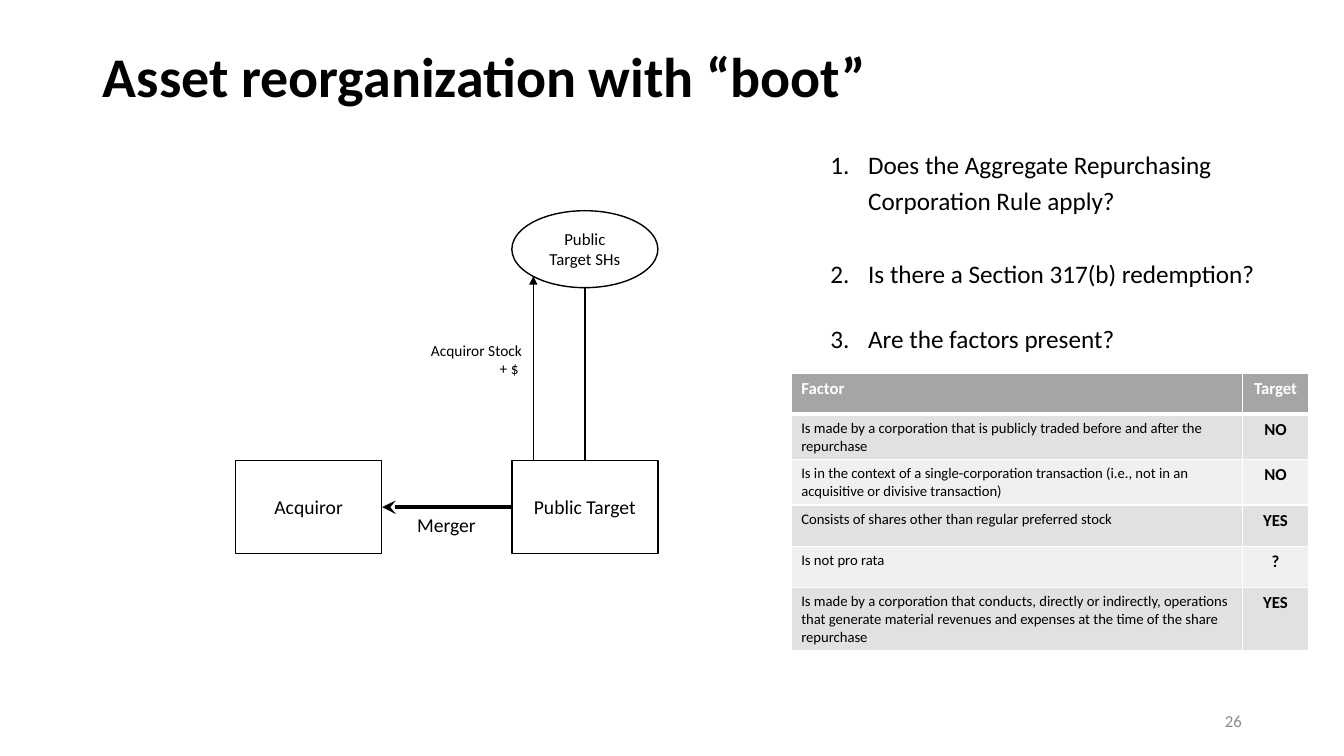
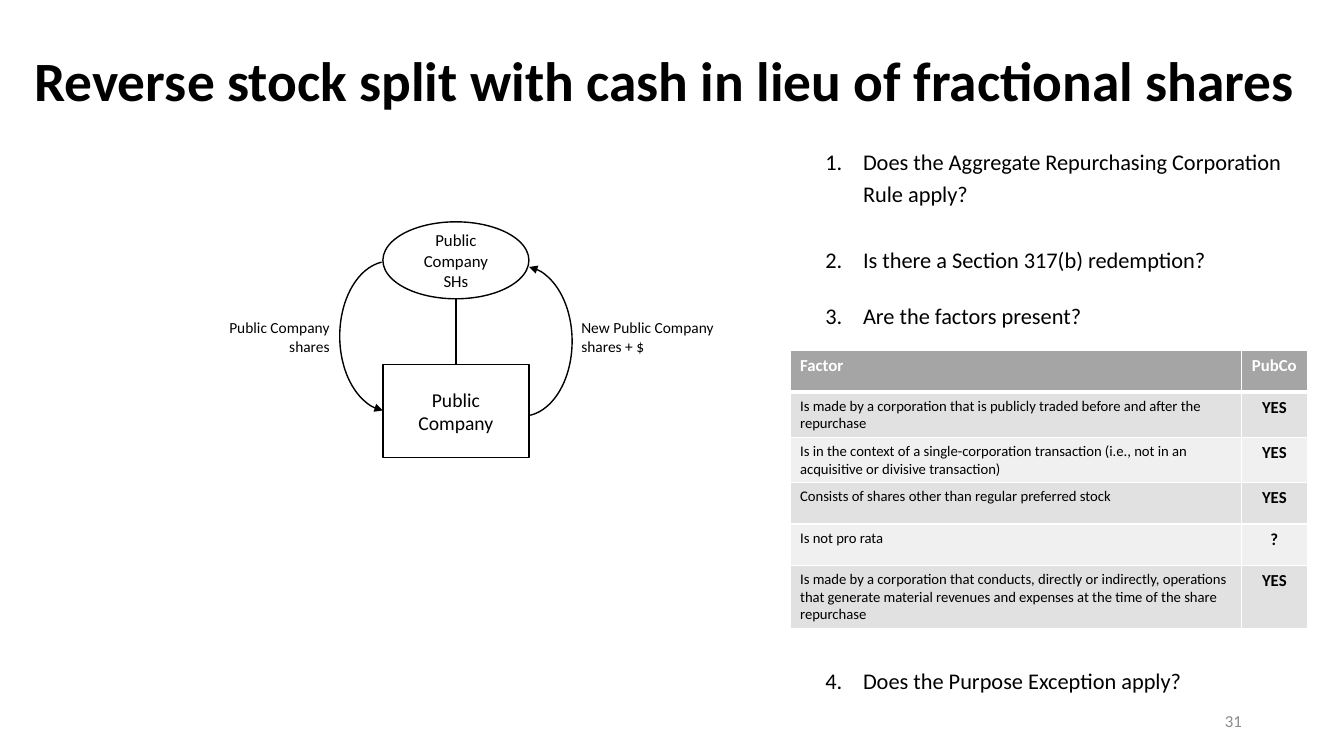
from lxml import etree
from pptx import Presentation
from pptx.dml.color import RGBColor
from pptx.enum.shapes import MSO_CONNECTOR, MSO_SHAPE
from pptx.enum.text import MSO_ANCHOR, MSO_AUTO_SIZE, PP_ALIGN
from pptx.oxml.ns import qn
from pptx.util import Cm, Pt

LEFT, CENTER, RIGHT = PP_ALIGN.LEFT, PP_ALIGN.CENTER, PP_ALIGN.RIGHT
TOP, MIDDLE = MSO_ANCHOR.TOP, MSO_ANCHOR.MIDDLE
RECTANGLE, OVAL, ARC = MSO_SHAPE.RECTANGLE, MSO_SHAPE.OVAL, MSO_SHAPE.ARC
STRAIGHT = MSO_CONNECTOR.STRAIGHT
NO_AUTOFIT = MSO_AUTO_SIZE.NONE

COLORS = {
    "ink": "000000",
    "white": "FFFFFF",
    "number": "8C8C8C",
    "header": "A5A5A5",
    "odd": "E1E1E1",
    "even": "F0F0F0",
}
FONT = "Calibri"
NODE_WIDTH, BOX_HEIGHT, OVAL_HEIGHT = 3.68, 2.34, 1.94
ARC_ANGLES = (165.13, 50.34)
INDENT = Cm(0.95)

FACTORS = [
    "Is made by a corporation that is publicly traded before and after the repurchase",
    "Is in the context of a single-corporation transaction (i.e., not in an acquisitive or divisive transaction)",
    "Consists of shares other than regular preferred stock",
    "Is not pro rata",
    "Is made by a corporation that conducts, directly or indirectly, operations that generate material "
    "revenues and expenses at the time of the share repurchase",
]
QUESTIONS = [
    "Does the Aggregate Repurchasing Corporation Rule apply?",
    "Is there a Section 317(b) redemption?",
    "Are the factors present?",
    "Does the Purpose Exception apply?",
]

PAGES = [
    {
        "title": "Asset reorganization with “boot”",
        "title_size": 40,
        "title_at": (2.34, 1.02, 29.21, 1.98),
        "number": "26",
        "nodes": [
            (RECTANGLE, 5.94, 11.61, "Acquiror"),
            (RECTANGLE, 12.9, 11.61, "Public Target"),
            (OVAL, 12.9, 5.31, "Public Target SHs"),
        ],
        "lines": [
            (14.74, 7.26, 14.74, 11.61, 1, None),
            (9.63, 12.78, 12.9, 12.78, 3.25, "stealth"),
            (13.44, 6.96, 13.44, 11.59, 1, "triangle"),
        ],
        "arcs": [],
        "labels": [
            ((10.26, 12.8, 2.01, 0.86), ["Merger"], 14, LEFT),
            ((10.59, 8.46, 2.82, 1.19), ["Acquiror Stock", "+ $ "], 11, RIGHT),
        ],
        "questions_at": (20.68, 3.48, 12.29, 15.01),
        "question_size": 18,
        "question_gaps": [0, 26, 21],
        "table_at": (19.94, 9.42),
        "header_height": 1.02,
        "company": "Target",
        "answers": ["NO", "NO", "YES", "?", "YES"],
    },
    {
        "title": "Reverse stock split with cash in lieu of fractional shares",
        "title_size": 39.6,
        "title_at": (0.61, 1.12, 32.66, 1.98),
        "number": "31",
        "nodes": [
            (RECTANGLE, 9.65, 9.19, "Public Company"),
            (OVAL, 9.65, 5.59, "Public Company SHs"),
        ],
        "lines": [(11.49, 7.53, 11.49, 9.19, 1, None)],
        "arcs": [(11.91, 6.71, 0), (8.56, 6.58, 180)],
        "labels": [
            ((14.4, 7.9, 3.96, 1.19), ["New Public Company", "shares + $"], 11, LEFT),
            ((5.51, 7.9, 3.05, 1.19), ["Public Company", "shares"], 11, RIGHT),
        ],
        "questions_at": (20.55, 3.48, 12.29, 15.01),
        "question_size": 16,
        "question_gaps": [0, 23.5, 17, 238],
        "table_at": (19.91, 8.84),
        "header_height": 1.04,
        "company": "PubCo",
        "answers": ["YES", "YES", "YES", "?", "YES"],
    },
]


def write(frame, texts, size, align=LEFT, color="ink", bold=False, anchor=TOP, wrap=True):
    frame.word_wrap = wrap
    frame.vertical_anchor = anchor
    font_format = {"name": FONT, "size": Pt(size), "bold": bold}
    for index, text in enumerate(texts):
        para = frame.add_paragraph() if index else frame.paragraphs[0]
        para.alignment = align
        span = para.add_run()
        span.text = text
        for name, value in font_format.items():
            setattr(span.font, name, value)
        span.font.color.rgb = RGBColor.from_string(COLORS[color])


def outline(item, width, head=None):
    item.line.color.rgb = RGBColor.from_string(COLORS["ink"])
    item.line.width = Pt(width)
    properties = item.element.spPr
    if head:
        etree.SubElement(properties.find(qn("a:ln")), qn("a:headEnd"), type=head)
    if properties.find(qn("a:effectLst")) is None:
        etree.SubElement(properties, qn("a:effectLst"))


deck = Presentation()
deck.slide_width, deck.slide_height = Cm(33.87), Cm(19.05)

for content in PAGES:
    page = deck.slides.add_slide(deck.slide_layouts[5])

    title = page.shapes.title
    title_place = zip(("left", "top", "width", "height"), content["title_at"])
    for name, value in title_place:
        setattr(title, name, Cm(value))
    write(title.text_frame, [content["title"]], content["title_size"], bold=True, anchor=MIDDLE)
    title.text_frame.auto_size = NO_AUTOFIT
    title.text_frame.paragraphs[0].line_spacing = 0.9

    for kind, left, top, text in content["nodes"]:
        is_box = kind == RECTANGLE
        height = BOX_HEIGHT if is_box else OVAL_HEIGHT
        node = page.shapes.add_shape(kind, Cm(left), Cm(top), Cm(NODE_WIDTH), Cm(height))
        node.fill.background()
        outline(node, 1)
        write(node.text_frame, [text], 14 if is_box else 12, CENTER, anchor=MIDDLE)

    for *ends, width, head in content["lines"]:
        line = page.shapes.add_connector(STRAIGHT, *map(Cm, ends))
        outline(line, width, head)

    for left, top, rotation in content["arcs"]:
        arc = page.shapes.add_shape(ARC, Cm(left), Cm(top), Cm(2.51), Cm(3.78))
        for index, angle in enumerate(ARC_ANGLES):
            arc.adjustments[index] = angle
        arc.rotation = rotation
        arc.fill.background()
        outline(arc, 1, "triangle")

    for place, texts, size, align in content["labels"]:
        label = page.shapes.add_textbox(*map(Cm, place))
        write(label.text_frame, texts, size, align, wrap=False)

    number = page.shapes.add_textbox(Cm(23.93), Cm(17.65), Cm(7.62), Cm(1.02))
    write(number.text_frame, [content["number"]], 12, RIGHT, "number", anchor=MIDDLE)

    box = page.shapes.add_textbox(*map(Cm, content["questions_at"]))
    gaps = content["question_gaps"]
    write(box.text_frame, QUESTIONS[:len(gaps)], content["question_size"])
    for para, gap in zip(box.text_frame.paragraphs, gaps):
        para.line_spacing = 1.2
        para.space_before = Pt(gap)
        properties = para._p.get_or_add_pPr()
        properties.set("marL", str(INDENT))
        properties.set("indent", str(-INDENT))
        etree.SubElement(properties, qn("a:buFont"), typeface="+mj-lt")
        etree.SubElement(properties, qn("a:buAutoNum"), type="arabicPeriod")

    rows = [("Factor", content["company"]), *zip(FACTORS, content["answers"])]
    left, top = content["table_at"]
    table = page.shapes.add_table(len(rows), 2, Cm(left), Cm(top), Cm(13.03), Cm(6.24)).table
    for column, width in zip(table.columns, (11.38, 1.65)):
        column.width = Cm(width)
    for row_index, texts in enumerate(rows):
        is_header = row_index == 0
        table.rows[row_index].height = Cm(content["header_height"] if is_header else 1.04)
        fill = "header" if is_header else "odd" if row_index % 2 else "even"
        for column_index, text in enumerate(texts):
            cell = table.cell(row_index, column_index)
            is_factor = column_index == 0 and not is_header
            write(
                cell.text_frame,
                [text],
                10.5 if is_factor else 12,
                CENTER if column_index else LEFT,
                "white" if is_header else "ink",
                not is_factor,
            )
            properties = cell._tc.get_or_add_tcPr()
            for side in "LRTB":
                thick = (is_header and side == "B") or (row_index == 1 and side == "T")
                border = etree.SubElement(properties, qn(f"a:ln{side}"), w=str(Pt(3 if thick else 1)))
                paint = etree.SubElement(border, qn("a:solidFill"))
                etree.SubElement(paint, qn("a:srgbClr"), val=COLORS["white"])
            cell.fill.solid()
            cell.fill.fore_color.rgb = RGBColor.from_string(COLORS[fill])

deck.save("out.pptx")
